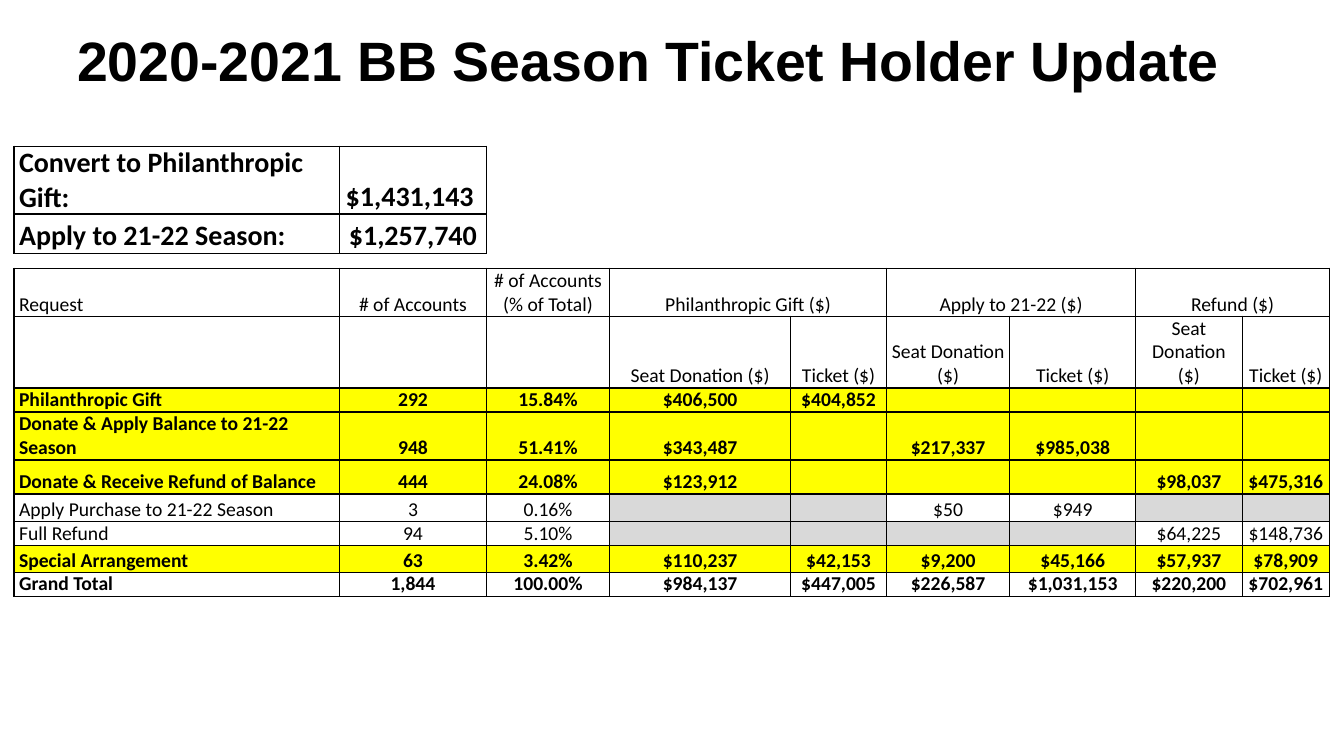
"""Build the season ticket holder update slide."""
from dataclasses import dataclass
from lxml.etree import SubElement as Sub
from pptx import Presentation
from pptx.dml.color import RGBColor as RGB
from pptx.enum.text import MSO_ANCHOR as Anchor, PP_ALIGN as Align
from pptx.oxml.ns import qn
from pptx.util import Pt

HUES = {"ink": "000000", "glow": "FFFF00", "gray": "D9D9D9"}
PLAIN = "{2D5ABB26-0587-4C30-8999-92F81FD0307C}"
WIDTHS = [232.5, 105, 88, 129.3, 68.5, 88, 90, 76, 62.5]
SIDES = {"L": (0, -1), "R": (0, 1), "T": (-1, 0), "B": (1, 0)}
PAIR = ["Seat Donation ($)", "Ticket ($)"]


@dataclass
class Row:
    high: float
    cells: list[str]
    size: float = 14
    bold: bool = False
    fill: str = ""
    void: str = ""
    boxed: int = 9


def lit(high: float, *cells: str) -> Row:
    return Row(high, list(cells), bold=True, fill="glow", void="glow")


def dim(high: float, *cells: str) -> Row:
    return Row(high, list(cells), void="gray")


ROWS = [
    Row(48.5, ["Convert to Philanthropic Gift:", "$1,431,143 "], 20, True, boxed=2),
    Row(28, ["Apply to 21-22 Season:", "$1,257,740"], 20, True, boxed=2),
    Row(10.8, [], 8, boxed=0),
    Row(34.3, ["Request", "# of Accounts", "# of Accounts (% of Total)",
               "Philanthropic Gift ($)", "", "Apply to 21-22 ($)", "", "Refund ($)"]),
    Row(51.2, [""] * 3 + PAIR * 3),
    lit(17.1, "Philanthropic Gift", "292", "15.84%", "$406,500", "$404,852"),
    lit(34.3, "Donate & Apply Balance to 21-22 Season", "948", "51.41%", "$343,487",
        "", "$217,337", "$985,038"),
    lit(24.4, "Donate & Receive Refund of Balance", "444", "24.08%", "$123,912",
        "", "", "", "$98,037", "$475,316"),
    dim(19.5, "Apply Purchase to 21-22 Season", "3", "0.16%", "", "", "$50", "$949"),
    dim(17.1, "Full Refund", "94", "5.10%", "", "", "", "", "$64,225", "$148,736"),
    lit(19.3, "Special Arrangement", "63", "3.42%", "$110,237", "$42,153",
        "$9,200", "$45,166", "$57,937", "$78,909"),
    Row(17.1, ["Grand Total", "1,844", "100.00%", "$984,137", "$447,005",
               "$226,587", "$1,031,153", "$220,200", "$702,961"], bold=True),
    Row(1.5, [], 1, boxed=0),
]


def write(frame, text: str, *, size: float, font: str = "Calibri",
          bold: bool = False, align=Align.LEFT) -> None:
    para = frame.paragraphs[0]
    para.alignment = align
    if not text:
        Sub(para._p, qn("a:endParaRPr"), sz=str(int(size * 100)))
        return
    run = para.add_run()
    run.text = text
    face = run.font
    face.name, face.size, face.bold = font, Pt(size), bold
    face.color.rgb = RGB.from_string(HUES["ink"])


def boxed(row: int, col: int) -> bool:
    return 0 <= row < len(ROWS) and 0 <= col < ROWS[row].boxed


def edge(cell, row: int, col: int) -> None:
    props = cell._tc.get_or_add_tcPr()
    for side, (down, over) in SIDES.items():
        line = Sub(props, qn("a:ln" + side), w=str(Pt(1)))
        if boxed(row, col) or boxed(row + down, col + over):
            Sub(Sub(line, qn("a:solidFill")), qn("a:srgbClr"), val=HUES["ink"])
        else:
            Sub(line, qn("a:noFill"))


def paint(cell, hue: str) -> None:
    if hue:
        cell.fill.solid()
        cell.fill.fore_color.rgb = RGB.from_string(HUES[hue])
    else:
        cell.fill.background()


def draw_row(table, spot: int, row: Row) -> None:
    table.rows[spot].height = Pt(row.high)
    for col in range(len(WIDTHS)):
        cell = table.cell(spot, col)
        text = row.cells[col] if col < len(row.cells) else ""
        cell.margin_left = cell.margin_right = Pt(3.6)
        cell.margin_top = cell.margin_bottom = 0
        cell.vertical_anchor = Anchor.BOTTOM
        write(cell.text_frame, text, size=row.size, bold=row.bold,
              align=Align.CENTER if col else Align.LEFT)
        edge(cell, spot, col)
        paint(cell, row.fill if text else row.void)


def draw_table(slide) -> None:
    high = sum(row.high for row in ROWS)
    frame = slide.shapes.add_table(len(ROWS), len(WIDTHS), Pt(10), Pt(104.4),
                                   Pt(sum(WIDTHS)), Pt(high))
    table = frame.table
    table.first_row = table.horz_banding = False
    table._tbl.tblPr.find(qn("a:tableStyleId")).text = PLAIN
    for part, width in zip(table.columns, WIDTHS):
        part.width = Pt(width)
    for spot, row in enumerate(ROWS):
        draw_row(table, spot, row)
    for col in (3, 5, 7):
        table.cell(3, col).merge(table.cell(3, col + 1))


def draw_title(slide) -> None:
    frame = slide.shapes.add_textbox(Pt(48), Pt(21.6), Pt(864), Pt(42)).text_frame
    frame.word_wrap = True
    frame.vertical_anchor = Anchor.MIDDLE
    write(frame, "2020-2021 BB Season Ticket Holder Update",
          size=39.6, font="Arial", bold=True)


def main() -> None:
    deck = Presentation()
    deck.slide_width, deck.slide_height = Pt(960), Pt(540)
    slide = deck.slides.add_slide(deck.slide_layouts[6])
    draw_title(slide)
    draw_table(slide)
    deck.save("out.pptx")


if __name__ == "__main__":
    main()
